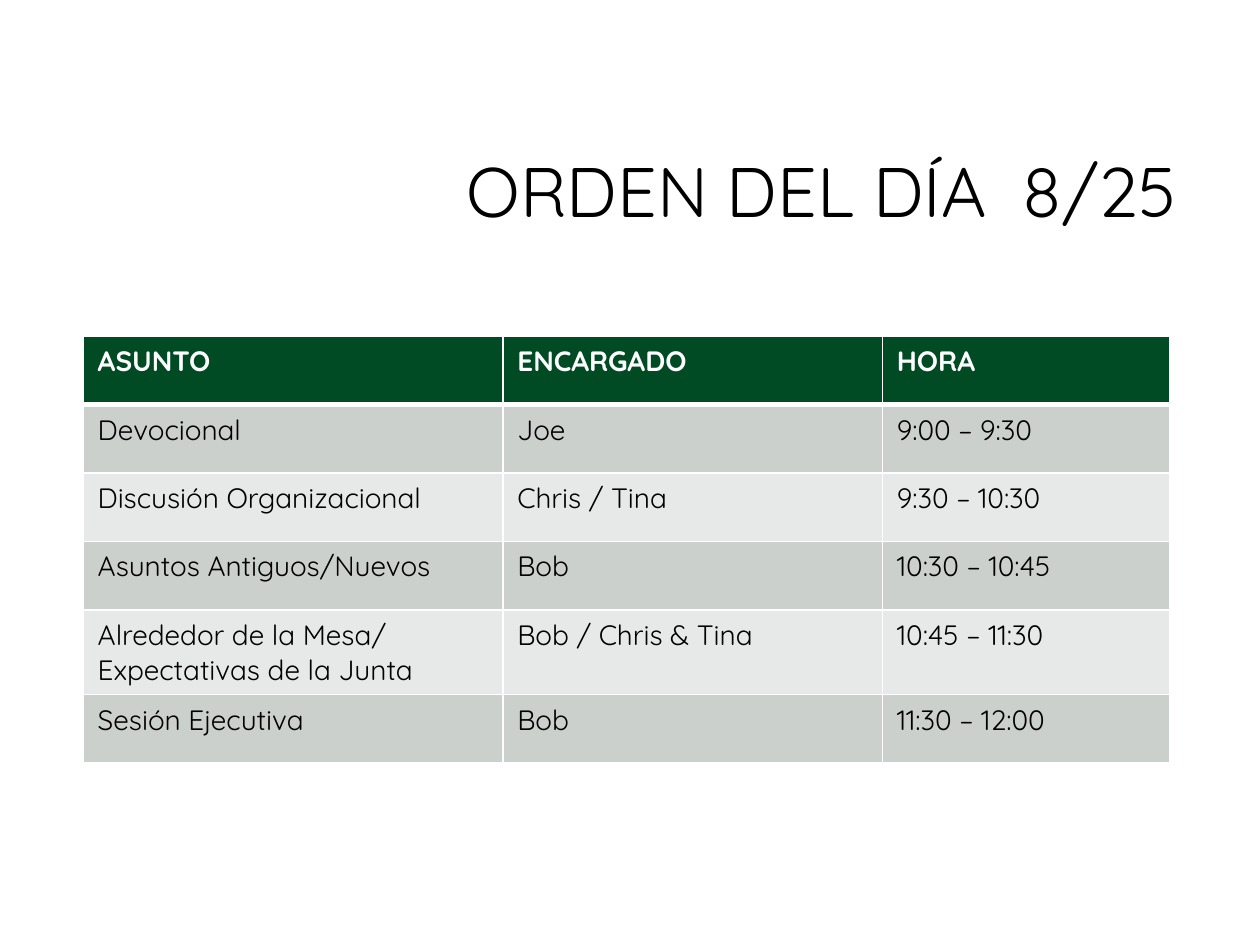
import dataclasses

import lxml.etree
import pptx
import pptx.dml.color
import pptx.enum.text
import pptx.oxml.ns
import pptx.util

Cm = pptx.util.Cm
Pt = pptx.util.Pt
RGB = pptx.dml.color.RGBColor.from_string
qn = pptx.oxml.ns.qn


@dataclasses.dataclass(frozen=True)
class Theme:
    font: str = "Quicksand"
    title_size: int = 40
    table_size: int = 16
    dark: str = "000000"
    light: str = "FFFFFF"
    header: str = "004B24"
    bands: tuple = ("CCD0CD", "E7E9E8")
    rule: float = 1
    header_rule: float = 3


class Deck:
    def __init__(self, theme):
        self.theme = theme
        self.prs = pptx.Presentation()
        self.prs.slide_width, self.prs.slide_height = Cm(25.4), Cm(19.05)
        self.s = self.prs.slides.add_slide(self.prs.slide_layouts[5])

    def set_all(self, obj, values):
        for name, value in values.items():
            setattr(obj, name, value)

    def run(self, p, text, size, color, bold=False):
        r = p.add_run()
        r.text = text
        self.set_all(r.font, {"name": self.theme.font, "size": Pt(size), "bold": bold})
        r.font.color.rgb = RGB(color)
        return r

    def title(self, text, date, gap, box):
        sp = self.s.shapes.title
        self.set_all(sp, dict(zip(("left", "top", "width", "height"), map(Cm, box))))
        tf = sp.text_frame
        self.set_all(tf, {
            "word_wrap": True,
            "auto_size": pptx.enum.text.MSO_AUTO_SIZE.NONE,
            "vertical_anchor": pptx.enum.text.MSO_ANCHOR.MIDDLE,
        })
        p = tf.paragraphs[0]
        self.set_all(p, {"alignment": pptx.enum.text.PP_ALIGN.RIGHT, "line_spacing": 0.9})
        style = self.theme.title_size, self.theme.dark
        self.run(p, text, *style)
        space = self.run(p, " ", *style)
        space._r.get_or_add_rPr().set("spc", str(gap * 100))
        self.run(p, date, *style)

    def borders(self, cell, widths):
        tcPr = cell._tc.get_or_add_tcPr()
        for i, (side, width) in enumerate(widths.items()):
            ln = lxml.etree.Element(qn(f"a:ln{side}"), w=str(Pt(width)))
            fill = lxml.etree.SubElement(ln, qn("a:solidFill"))
            lxml.etree.SubElement(fill, qn("a:srgbClr"), val=self.theme.light)
            tcPr.insert(i, ln)

    def cell(self, cell, text, row):
        t = self.theme
        header = row == 0
        self.set_all(cell, {
            "margin_left": Cm(0.29), "margin_right": Cm(0.29),
            "margin_top": Cm(0.15), "margin_bottom": Cm(0.15),
        })
        cell.fill.solid()
        cell.fill.fore_color.rgb = RGB(t.header if header else t.bands[(row - 1) % 2])
        color = t.light if header else t.dark
        self.run(cell.text_frame.paragraphs[0], text, t.table_size, color, header)
        self.borders(cell, {
            "L": t.rule, "R": t.rule,
            "T": t.header_rule if row == 1 else t.rule,
            "B": t.header_rule if header else t.rule,
        })

    def table(self, rows, left, top, widths, row_height):
        frame = self.s.shapes.add_table(
            len(rows), len(widths), Cm(left), Cm(top),
            Cm(sum(widths)), Cm(row_height * len(rows)))
        table = frame.table
        for column, width in zip(table.columns, widths):
            column.width = Cm(width)
        for i, row in enumerate(rows):
            table.rows[i].height = Cm(row_height)
            for j, text in enumerate(row):
                self.cell(table.cell(i, j), text, i)


AGENDA = [
    ("ASUNTO", "ENCARGADO", "HORA"),
    ("Devocional", "Joe", "9:00 – 9:30"),
    ("Discusión Organizacional", "Chris / Tina", "9:30 – 10:30"),
    ("Asuntos Antiguos/Nuevos", "Bob", "10:30 – 10:45"),
    ("Alrededor de la Mesa/ Expectativas de la Junta", "Bob / Chris & Tina", "10:45 – 11:30"),
    ("Sesión Ejecutiva", "Bob", "11:30 – 12:00"),
]


def main():
    deck = Deck(Theme())
    deck.title("ORDEN DEL DÍA", "8/25", gap=10, box=(6.05, 2.13, 17.93, 3.58))
    deck.table(AGENDA, left=1.68, top=6.78, widths=(8.46, 7.65, 5.79), row_height=1.38)
    deck.prs.save("out.pptx")


if __name__ == "__main__":
    main()
